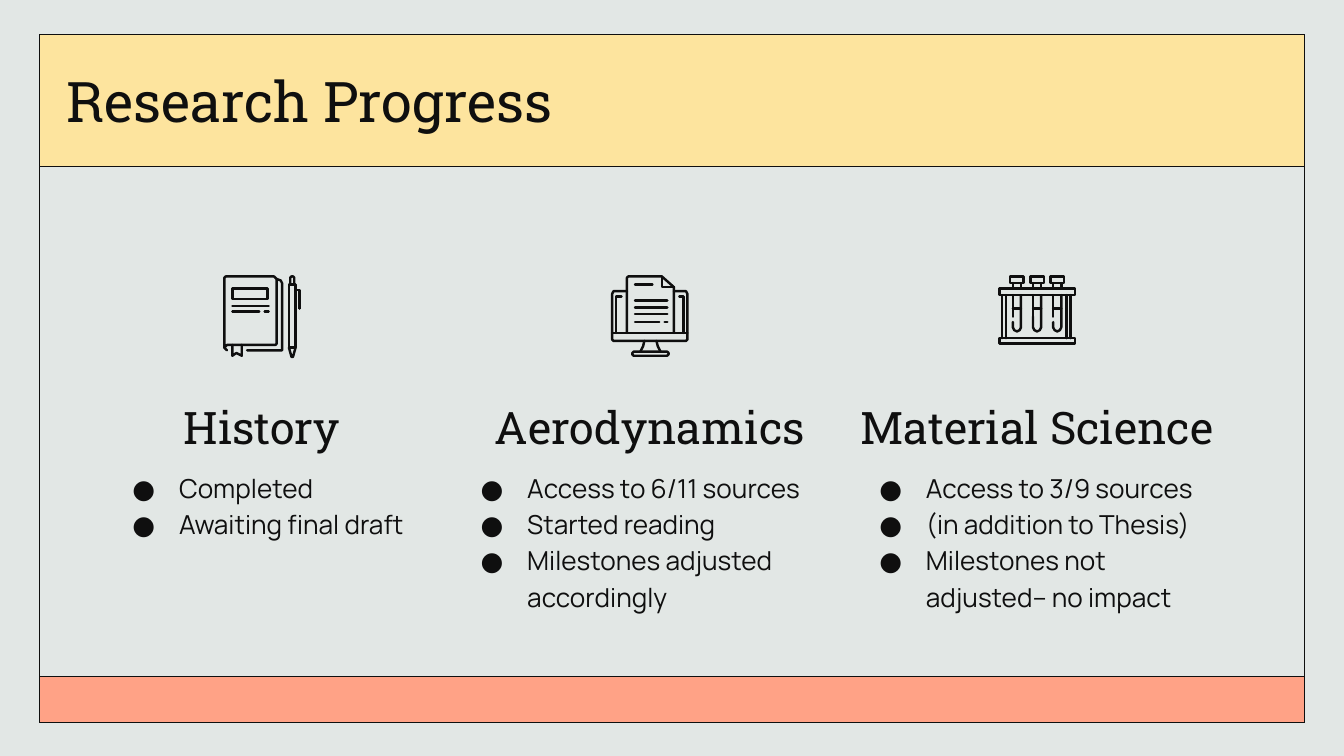
from lxml.etree import SubElement
from pptx import Presentation
from pptx.dml.color import RGBColor
from pptx.enum.shapes import MSO_SHAPE
from pptx.enum.text import MSO_ANCHOR, PP_ALIGN
from pptx.oxml.ns import qn
from pptx.util import Cm, Pt

COLORS = {"background": "E2E7E5", "ink": "0F0F0F", "header": "FDE49E", "footer": "FFA286"}
HEADING_FONT, BODY_FONT = "Roboto Slab", "Manrope"
INSET = Cm(0.25)
ICON_UNIT = Cm(2.54) / 100
ICON_WIDTH = 1.47


def rectangle(x1, y1, x2, y2):
    return [(x1, y1), (x2, y1), (x2, y2), (x1, y2), (x1, y1)]


def horizontal(y, x1, x2):
    return [(x1, y), (x2, y)]


def vertical(x, y1, y2):
    return [(x, y1), (x, y2)]


def test_tube(x, has_gap):
    """Strokes of one tube whose left wall stands at x."""
    bowl = [(x, 35 if has_gap else 31), (x, 39), (x + 1, 41), (x + 3, 42),
            (x + 5, 41), (x + 6, 39), (x + 6, 15)]
    return [rectangle(x - 2, 1, x + 8, 6), vertical(x, 6, 10), vertical(x + 6, 6, 10),
            vertical(x, 15, 31), bowl, horizontal(25, x, x + 6)]


# Each icon is a list of parts, each part a list of strokes.
PEN = [
    rectangle(49, 7, 54, 54),
    [(50, 7), (50, 2), (51, 1), (52, 1), (53, 2), (53, 7)],
    [(49, 54), (51, 61), (52, 61), (54, 54)],
    [(54, 11), (57, 11), (57, 25)],
]
COVER = [
    [(3, 56), (1, 54), (1, 2), (2, 1), (38, 1), (40, 3), (40, 51), (39, 52), (3, 52), (1, 54)],
    [(7, 52), (7, 60), (10, 58), (14, 60), (14, 52)],
    [(40, 3), (43, 4), (44, 6), (44, 56), (18, 56)],
]
NOTEBOOK = [
    PEN,
    [horizontal(23, 7, 34)], [horizontal(27, 31, 34)], [horizontal(27, 7, 27)],
    [rectangle(7, 10, 33, 18)],
    COVER,
]
SCREEN = [
    [(12, 43), (12, 2), (13, 1), (38, 1), (47, 9), (47, 43)],
    [(38, 1), (38, 9), (47, 9)],
    [(12, 12), (2, 12), (1, 14), (1, 48), (2, 49), (56, 49), (57, 48), (57, 14), (56, 12), (47, 12)],
    horizontal(43, 1, 57),
    [(8, 16), (4, 16), (4, 43)], [(51, 16), (54, 16), (54, 43)],
    [(25, 49), (24, 53), (22, 57)], [(34, 49), (35, 53), (37, 57)],
    [(17, 57), (42, 57), (43, 58), (43, 59), (42, 60), (17, 60), (16, 59), (16, 58), (17, 57)],
]
MONITOR = [
    [horizontal(7, 18, 31)],
    *[[horizontal(y, 18, 42)] for y in (19, 24, 29)],
    [horizontal(35, 40, 42)], [horizontal(35, 18, 36)],
    SCREEN,
]
TEST_TUBES = [[
    rectangle(1, 10, 57, 15), rectangle(1, 47, 57, 51),
    *[vertical(x, 15, 47) for x in (3, 6, 51, 54)],
    *test_tube(11, True), *test_tube(26, False), *test_tube(41, True),
]]

# centre, heading width, list width, icon, heading, bullets
COLUMNS = [
    (4.95, 6.17, 6.17, NOTEBOOK, "History", ["Completed", "Awaiting final draft"]),
    (12.28, 6.65, 7.67, MONITOR, "Aerodynamics",
     ["Access to 6/11 sources", "Started reading", "Milestones adjusted accordingly"]),
    (19.6, 7.44, 7.24, TEST_TUBES, "Material Science",
     ["Access to 3/9 sources", "(in addition to Thesis)", "Milestones not adjusted– no impact"]),
]


def color(name):
    return RGBColor.from_string(COLORS[name])


def add_run(paragraph, text, font_name, size):
    run = paragraph.add_run()
    run.text = text
    run.font.name = font_name
    run.font.size = Pt(size)
    run.font.color.rgb = color("ink")


def prepare_frame(shape, anchor):
    frame = shape.text_frame
    frame.word_wrap = True
    frame.vertical_anchor = anchor
    frame.margin_left = frame.margin_right = INSET
    frame.margin_top = frame.margin_bottom = INSET
    return frame


def add_band(slide, left, top, width, height, fill=None):
    """Outlined rectangle, empty inside unless a fill is named."""
    shape = slide.shapes.add_shape(
        MSO_SHAPE.RECTANGLE, Cm(left), Cm(top), Cm(width), Cm(height))
    shape.shadow.inherit = False
    shape.line.color.rgb = color("ink")
    shape.line.width = Pt(0.75)
    if fill:
        shape.fill.solid()
        shape.fill.fore_color.rgb = color(fill)
    else:
        shape.fill.background()
    return shape


def add_title(slide, left, top, width, height, text):
    shape = add_band(slide, left, top, width, height, "header")
    frame = prepare_frame(shape, MSO_ANCHOR.MIDDLE)
    frame.margin_left = 2 * INSET
    frame.paragraphs[0].alignment = PP_ALIGN.LEFT
    add_run(frame.paragraphs[0], text, HEADING_FONT, 30)


def add_heading(slide, left, top, width, height, text):
    shape = slide.shapes.add_textbox(Cm(left), Cm(top), Cm(width), Cm(height))
    paragraph = prepare_frame(shape, MSO_ANCHOR.BOTTOM).paragraphs[0]
    paragraph.alignment = PP_ALIGN.CENTER
    add_run(paragraph, text, HEADING_FONT, 24)


def add_bullets(slide, left, top, width, height, items):
    shape = slide.shapes.add_textbox(Cm(left), Cm(top), Cm(width), Cm(height))
    frame = prepare_frame(shape, MSO_ANCHOR.TOP)
    for index, item in enumerate(items):
        paragraph = frame.add_paragraph() if index else frame.paragraphs[0]
        paragraph.line_spacing = 1.15
        properties = paragraph._p.get_or_add_pPr()
        properties.set("marL", str(Cm(1.27)))
        properties.set("indent", str(-Cm(0.88)))
        bullet_color = SubElement(properties, qn("a:buClr"))
        SubElement(bullet_color, qn("a:srgbClr"), val=COLORS["ink"])
        SubElement(properties, qn("a:buFont"), typeface=BODY_FONT)
        SubElement(properties, qn("a:buChar"), char="●")
        add_run(paragraph, item, BODY_FONT, 14)


def add_icon(slide, left, top, parts):
    """Group of line drawings made of open strokes, measured in icon units."""
    group = slide.shapes.add_group_shape()
    for strokes in parts:
        builder = group.shapes.build_freeform(*strokes[0][0], scale=ICON_UNIT)
        for stroke in strokes:
            if stroke is not strokes[0]:
                builder.move_to(*stroke[0])
            builder.add_line_segments(stroke[1:], close=False)
        shape = builder.convert_to_shape(Cm(left), Cm(top))
        shape.shadow.inherit = False
        shape.fill.background()
        shape.line.color.rgb = color("ink")
        shape.line.width = Pt(1.3)
        line = shape.line._get_or_add_ln()
        line.set("cap", "rnd")
        SubElement(line, qn("a:round"))


def add_column(slide, center, heading_width, list_width, icon, heading, items):
    add_heading(slide, center - heading_width / 2, 7.5, heading_width, 1.32, heading)
    add_bullets(slide, center - list_width / 2, 8.6, list_width, 3.71, items)
    add_icon(slide, center - ICON_WIDTH / 2, 5.2, icon)


def main():
    presentation = Presentation()
    presentation.slide_width, presentation.slide_height = Cm(25.4), Cm(14.29)
    slide = presentation.slides.add_slide(presentation.slide_layouts[6])
    slide.background.fill.solid()
    slide.background.fill.fore_color.rgb = color("background")

    left, top, width, height, footer_height = 0.75, 0.65, 23.9, 13.01, 0.87
    add_band(slide, left, top, width, height)
    add_band(slide, left, top + height - footer_height, width, footer_height, "footer")
    add_title(slide, left, top, width, 2.5, "Research Progress")
    for column in COLUMNS:
        add_column(slide, *column)
    presentation.save("out.pptx")


if __name__ == "__main__":
    main()
